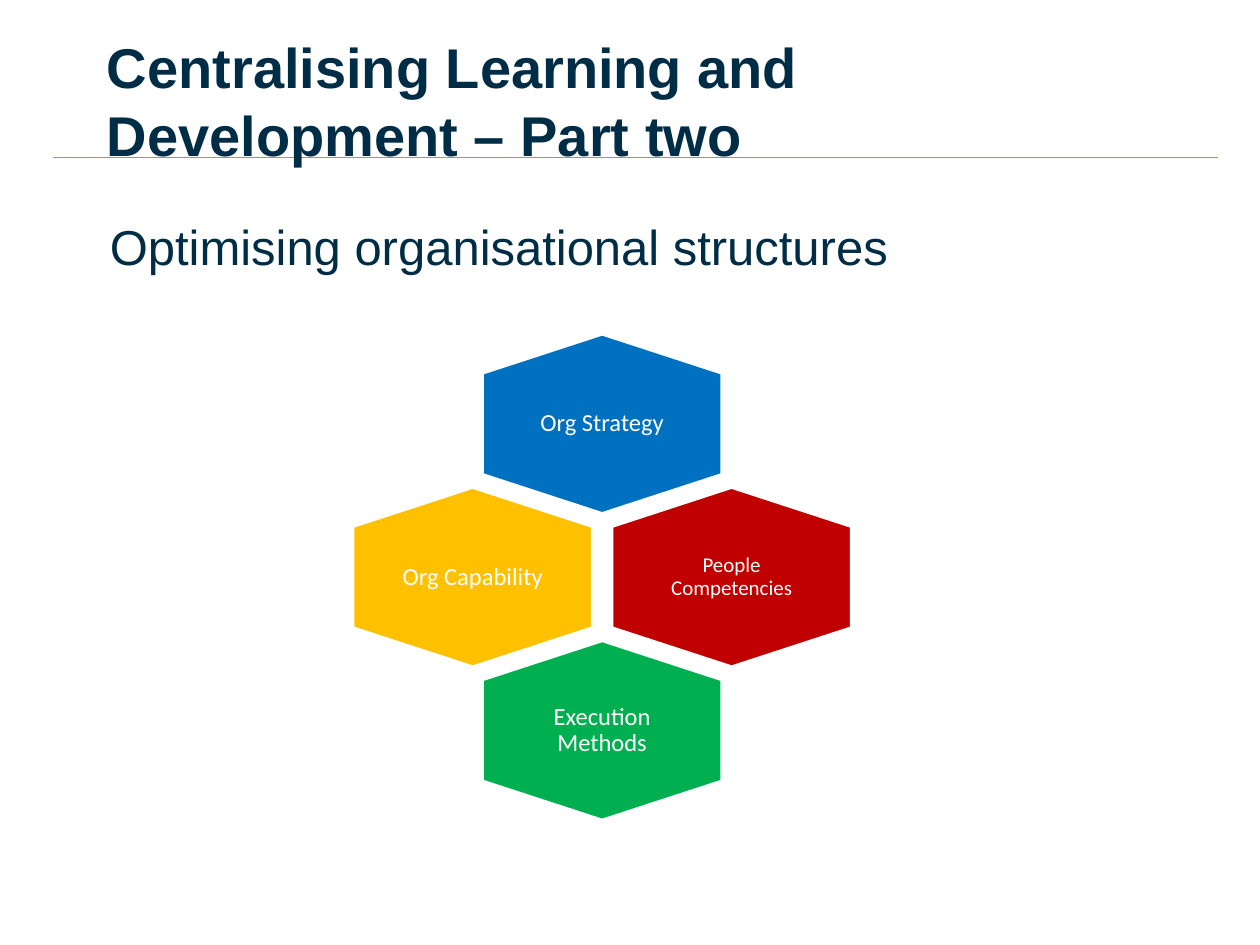
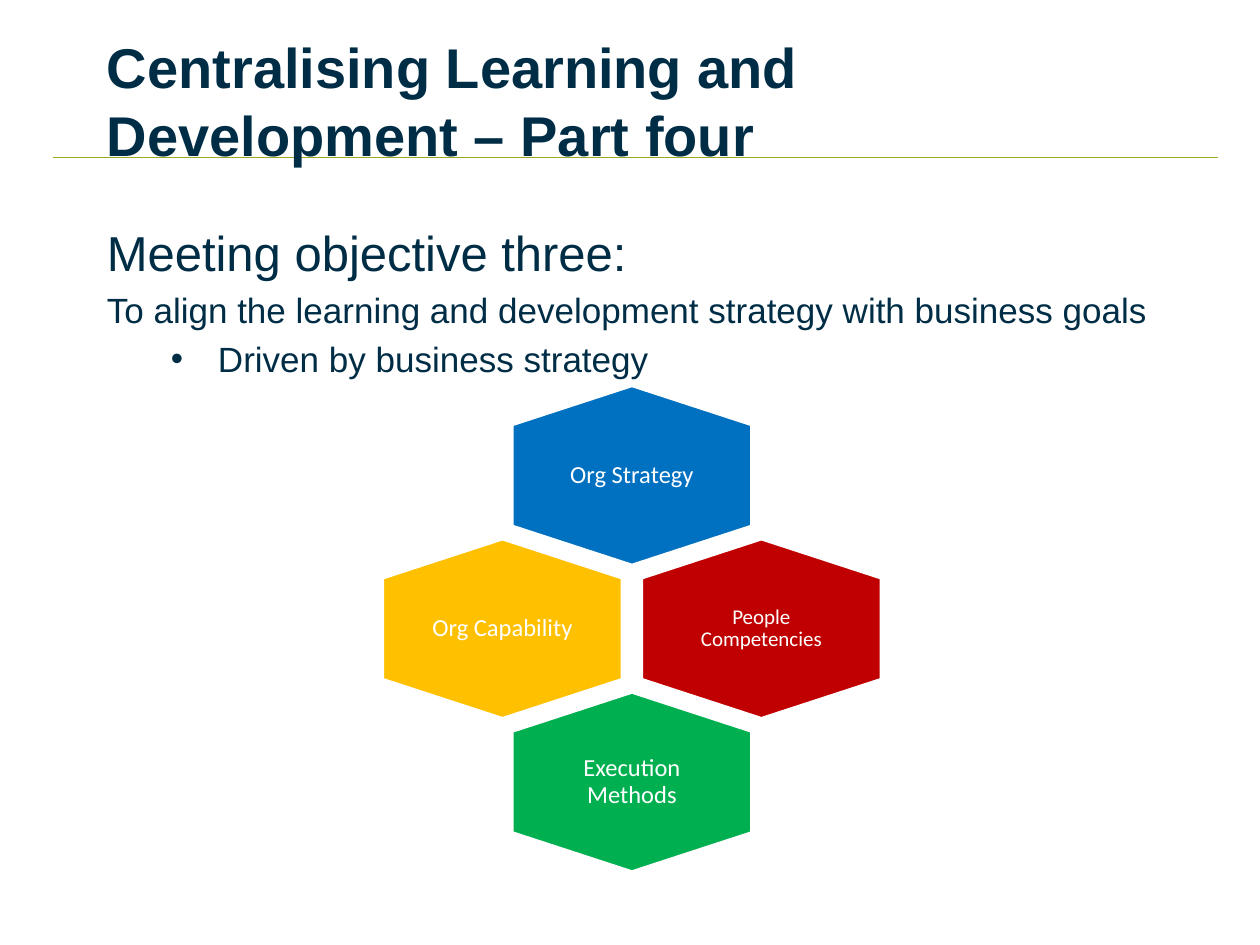
from dataclasses import dataclass

from lxml import etree
from pptx import Presentation
from pptx.dml.color import RGBColor
from pptx.enum import shapes, text
from pptx.oxml import ns
from pptx.util import Cm, Pt


@dataclass(frozen=True)
class Theme:
    ink: str = "002D46"
    rule: str = "9BA921"
    white: str = "FFFFFF"
    blue: str = "0070C0"
    amber: str = "FFC000"
    red: str = "C00000"
    green: str = "00B050"
    heading_font: str = "Arial"
    diagram_font: str = "Calibri"
    title_size: int = 32
    lead_size: int = 28
    detail_size: int = 20
    hexagon_size: int = 14
    small_hexagon_size: int = 12


THEME = Theme()

SLIDE_WIDTH, SLIDE_HEIGHT = Cm(25.4), Cm(19.05)
TITLE_BOX = (Cm(1.9), Cm(0.43), Cm(21.6), Cm(3.18))
BODY_WIDTH, BODY_HEIGHT = Cm(21.6), Cm(12.7)

HEXAGON_WIDTH, HEXAGON_HEIGHT, SHOULDER = Cm(4.84), Cm(3.63), Cm(0.79)
COLUMN_STEP, ROW_STEP = Cm(2.61), Cm(3.09)
WIDE_INSETS = (Cm(0.89), Cm(0.97))
NARROW_INSETS = (Cm(0.61), Cm(0.69))

# label, fill, column, row, type size, insets
HEXAGONS = [
    ("Org Strategy", THEME.blue, 1, 0, THEME.hexagon_size, WIDE_INSETS),
    ("Org Capability", THEME.amber, 0, 1, THEME.hexagon_size, WIDE_INSETS),
    ("People Competencies", THEME.red, 2, 1, THEME.small_hexagon_size, NARROW_INSETS),
    ("Execution Methods", THEME.green, 1, 2, THEME.hexagon_size, WIDE_INSETS),
]


def color(value):
    return RGBColor.from_string(value)


def add_run(paragraph, words, size, font, fill, bold=False):
    run = paragraph.add_run()
    run.text = words
    run.font.size = Pt(size)
    run.font.name = font
    run.font.bold = bold
    run.font.color.rgb = color(fill)


def place(shape, left, top, width, height):
    shape.left, shape.top, shape.width, shape.height = left, top, width, height


def set_bullet(paragraph, character=None, margin=0, indent=0):
    """Give the paragraph a bullet character, or remove the inherited one."""
    properties = paragraph._p.get_or_add_pPr()
    properties.set("marL", str(margin))
    properties.set("indent", str(indent))
    if character:
        font = etree.SubElement(properties, ns.qn("a:buFont"))
        font.set("typeface", THEME.heading_font)
        etree.SubElement(properties, ns.qn("a:buChar")).set("char", character)
    else:
        etree.SubElement(properties, ns.qn("a:buNone"))


def add_master_rule(presentation, slide):
    """Draw the line under the title and hand it to the slide master."""
    rule = slide.shapes.add_connector(
        shapes.MSO_CONNECTOR.STRAIGHT, Cm(1.07), Cm(3.18), Cm(24.56), Cm(3.18))
    rule.line.color.rgb = color(THEME.rule)
    rule.line.width = Pt(0.75)
    etree.SubElement(rule.element.spPr, ns.qn("a:effectLst"))
    presentation.slide_master.shapes.element.insert(2, rule.element)


def fill_title(slide, words):
    title = slide.shapes.title
    place(title, *TITLE_BOX)
    frame = title.text_frame
    frame.auto_size = text.MSO_AUTO_SIZE.NONE
    frame.vertical_anchor = text.MSO_ANCHOR.MIDDLE
    paragraph = frame.paragraphs[0]
    paragraph.alignment = text.PP_ALIGN.LEFT
    add_run(paragraph, words, THEME.title_size, THEME.heading_font, THEME.ink, bold=True)


def fill_body(slide, left, top, lead, detail=None, point=None):
    body = slide.placeholders[1]
    place(body, left, top, BODY_WIDTH, BODY_HEIGHT)
    frame = body.text_frame
    frame.auto_size = text.MSO_AUTO_SIZE.NONE
    frame.margin_top = Cm(0.25)

    paragraph = frame.paragraphs[0]
    set_bullet(paragraph)
    paragraph.space_before = Pt(0)
    add_run(paragraph, lead, THEME.lead_size, THEME.heading_font, THEME.ink)
    if detail:
        paragraph = frame.add_paragraph()
        set_bullet(paragraph)
        add_run(paragraph, detail, THEME.detail_size, THEME.heading_font, THEME.ink)
    if point:
        paragraph = frame.add_paragraph()
        paragraph.level = 1
        set_bullet(paragraph, "•", Cm(2.24), Cm(-0.95))
        add_run(paragraph, point, THEME.detail_size, THEME.heading_font, THEME.ink)


def add_hexagon(group, left, top, label, fill, size, insets):
    middle, lower = HEXAGON_WIDTH // 2, HEXAGON_HEIGHT - SHOULDER
    builder = group.shapes.build_freeform(middle, 0)
    builder.add_line_segments([
        (HEXAGON_WIDTH, SHOULDER), (HEXAGON_WIDTH, lower),
        (middle, HEXAGON_HEIGHT), (0, lower), (0, SHOULDER)])
    hexagon = builder.convert_to_shape(left, top)
    hexagon.shadow.inherit = False
    hexagon.fill.solid()
    hexagon.fill.fore_color.rgb = color(fill)
    hexagon.line.color.rgb = color(THEME.white)
    hexagon.line.width = Pt(2)

    frame = hexagon.text_frame
    frame.word_wrap = True
    frame.vertical_anchor = text.MSO_ANCHOR.MIDDLE
    frame.margin_left = frame.margin_right = insets[0]
    frame.margin_top = frame.margin_bottom = insets[1]
    paragraph = frame.paragraphs[0]
    paragraph.alignment = text.PP_ALIGN.CENTER
    paragraph.line_spacing = 0.9
    paragraph.space_after = Pt(5.9)
    add_run(paragraph, label, size, THEME.diagram_font, THEME.white)


def add_honeycomb(slide, left, top):
    group = slide.shapes.add_group_shape()
    for label, fill, column, row, size, insets in HEXAGONS:
        add_hexagon(group, left + column * COLUMN_STEP, top + row * ROW_STEP,
                    label, fill, size, insets)


def add_content_slide(presentation, title):
    slide = presentation.slides.add_slide(presentation.slide_layouts[1])
    fill_title(slide, title)
    return slide


def build_structures_slide(presentation):
    slide = add_content_slide(
        presentation, "Centralising Learning and Development – Part two")
    fill_body(slide, Cm(1.96), Cm(4.11), "Optimising organisational structures")
    add_honeycomb(slide, Cm(7.11), Cm(6.73))
    return slide


def build_objective_slide(presentation):
    slide = add_content_slide(
        presentation, "Centralising Learning and Development – Part four")
    fill_body(slide, Cm(1.9), Cm(4.24), "Meeting objective three:",
              "To align the learning and development strategy with business goals",
              "Driven by business strategy")
    add_honeycomb(slide, Cm(7.71), Cm(7.77))


def main():
    presentation = Presentation()
    presentation.slide_width, presentation.slide_height = SLIDE_WIDTH, SLIDE_HEIGHT
    first_slide = build_structures_slide(presentation)
    add_master_rule(presentation, first_slide)
    build_objective_slide(presentation)
    presentation.save("out.pptx")


if __name__ == "__main__":
    main()
